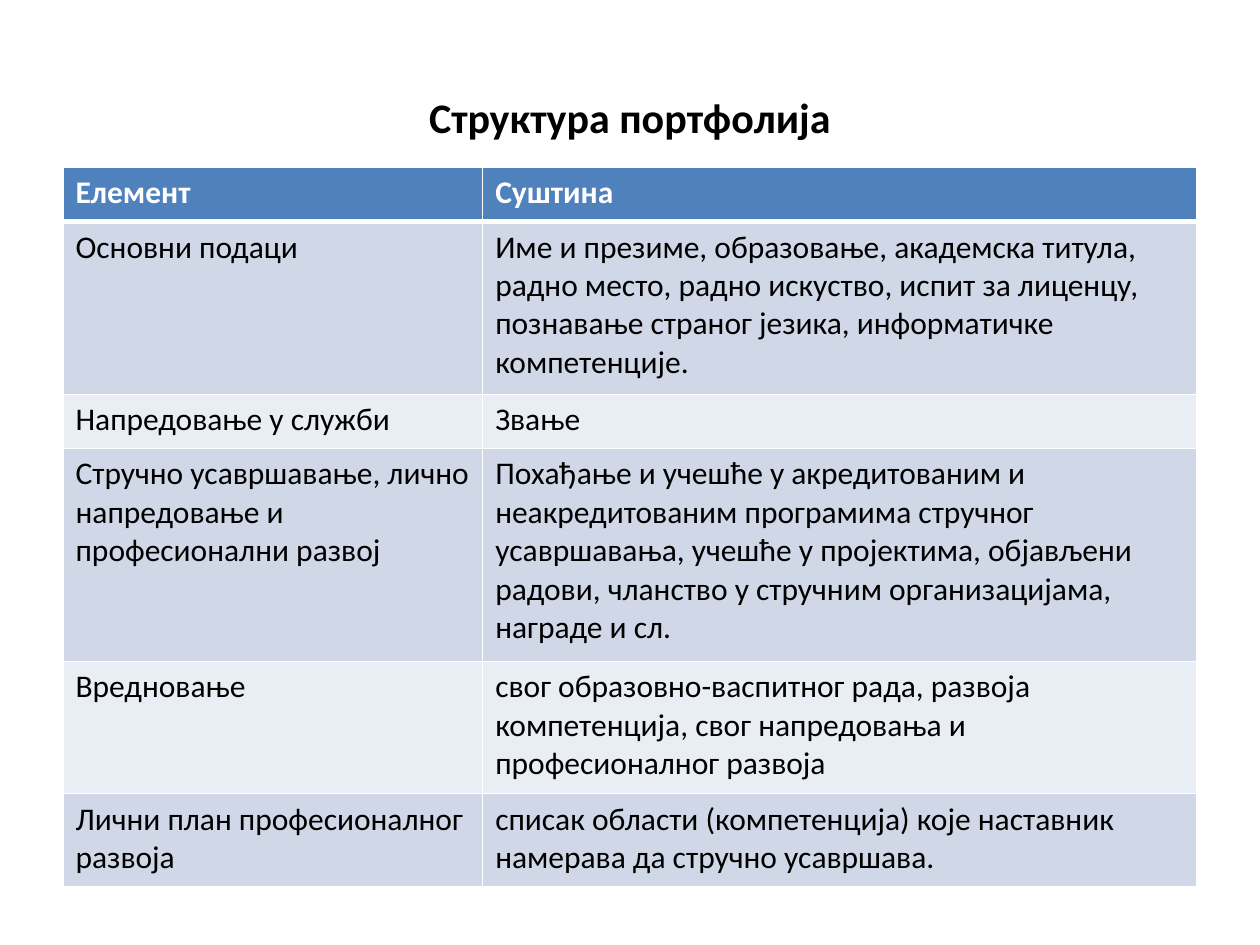
from lxml import etree
from pptx import Presentation
from pptx.dml.color import RGBColor
from pptx.enum import text
from pptx.oxml.ns import qn
from pptx.util import Cm, Pt

TITLE = "Структура портфолија"
ROWS = [  # height in cm, element, essence
    (1.09, "Елемент", "Суштина"),
    (3.48, "Основни подаци",
     "Име и презиме, образовање, академска титула, радно место, радно искуство, "
     "испит за лиценцу, познавање страног језика, информатичке компетенције."),
    (1.09, "Напредовање у служби", "Звање"),
    (4.29, "Стручно усавршавање, лично напредовање и професионални развој",
     "Похађање и учешће у акредитованим и неакредитованим програмима стручног "
     "усавршавања, учешће у пројектима, објављени радови, чланство у стручним "
     "организацијама, награде и сл."),
    (2.67, "Вредновање",
     "свог образовно-васпитног рада, развоја компетенција, свог напредовања и "
     "професионалног развоја"),
    (1.87, "Лични план професионалног развоја",
     "списак области (компетенција) које наставник намерава да стручно усавршава."),
]
COL_WIDTHS = (8.46, 14.4)
LEFT, TABLE_TOP = 1.27, 3.38
FONT = "Calibri"
BLACK = RGBColor(0, 0, 0)
WHITE = RGBColor(0xFF, 0xFF, 0xFF)
HEADER = RGBColor(0x4F, 0x81, 0xBD)
BANDS = (RGBColor(0xE9, 0xED, 0xF4), RGBColor(0xD0, 0xD8, 0xE8))


def style(p, size, color, bold):
    p.font.name, p.font.size = FONT, Pt(size)
    p.font.color.rgb, p.font.bold = color, bold


def set_borders(cell, widths):
    """Draw white cell borders; widths maps lnL, lnR, lnT, lnB to points."""
    tc_pr = cell._tc.get_or_add_tcPr()
    for side, width in widths.items():
        ln = etree.SubElement(tc_pr, qn(f"a:{side}"), w=str(Pt(width)))
        fill = etree.SubElement(ln, qn("a:solidFill"))
        etree.SubElement(fill, qn("a:srgbClr"), val=str(WHITE))


def add_title(s):
    sp = s.shapes.add_textbox(Cm(LEFT), Cm(0.76), Cm(sum(COL_WIDTHS)), Cm(3.18))
    tf = sp.text_frame
    tf.word_wrap = True
    tf.vertical_anchor = text.MSO_ANCHOR.MIDDLE
    p = tf.paragraphs[0]
    p.text = TITLE
    p.alignment = text.PP_ALIGN.CENTER
    style(p, 24, BLACK, True)


def add_structure_table(s):
    height = sum(row[0] for row in ROWS)
    table = s.shapes.add_table(len(ROWS), len(COL_WIDTHS), Cm(LEFT), Cm(TABLE_TOP),
                               Cm(sum(COL_WIDTHS)), Cm(height)).table
    for column, width in zip(table.columns, COL_WIDTHS):
        column.width = Cm(width)
    for i, (row_height, *words) in enumerate(ROWS):
        table.rows[i].height = Cm(row_height)
        is_header = i == 0
        for cell, word in zip(table.rows[i].cells, words):
            cell.text = word
            style(cell.text_frame.paragraphs[0], 18,
                  WHITE if is_header else BLACK, is_header)
            # Borders come before the fill in the cell properties.
            set_borders(cell, {"lnL": 1, "lnR": 1, "lnT": 3 if i == 1 else 1,
                               "lnB": 3 if is_header else 1})
            cell.fill.solid()
            cell.fill.fore_color.rgb = HEADER if is_header else BANDS[i % 2]


def main():
    prs = Presentation()
    prs.slide_width, prs.slide_height = Cm(25.4), Cm(19.05)
    s = prs.slides.add_slide(prs.slide_layouts[6])
    add_title(s)
    add_structure_table(s)
    prs.save("out.pptx")


if __name__ == "__main__":
    main()
